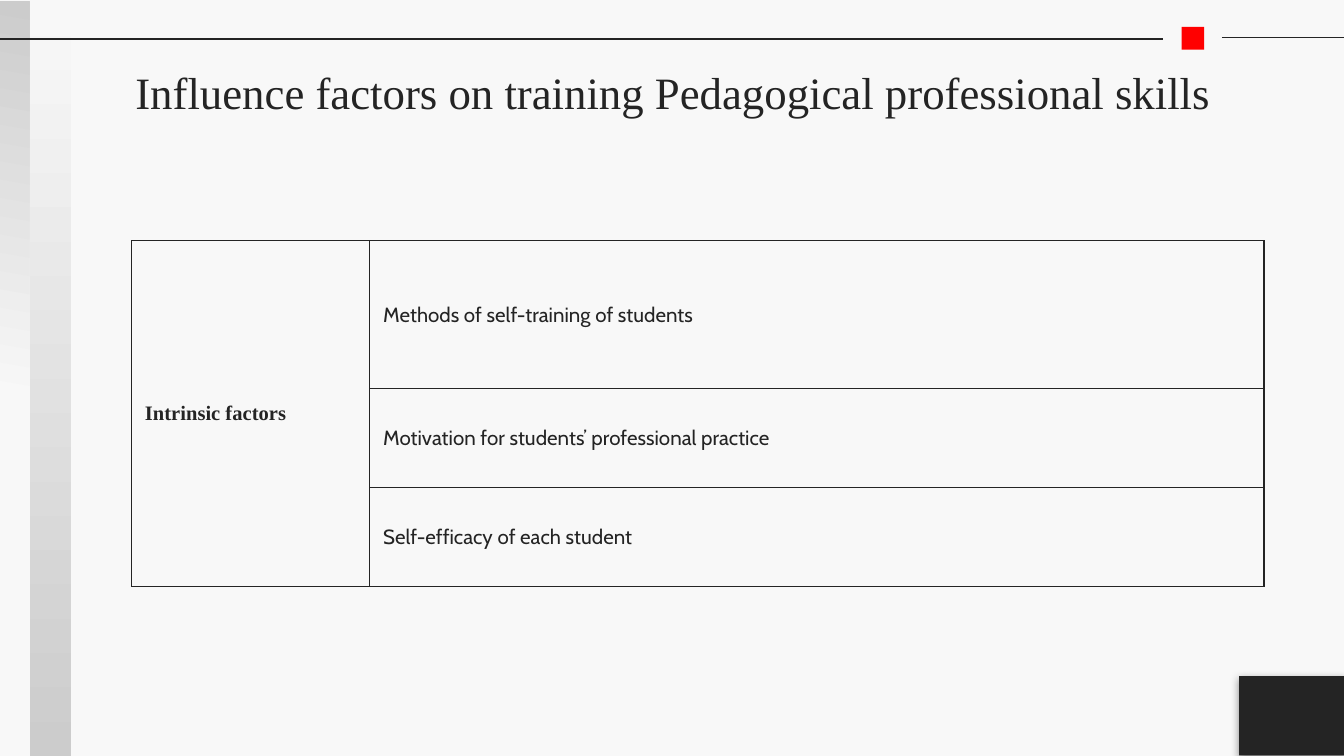
from dataclasses import dataclass

from lxml import etree
from pptx import Presentation
from pptx.dml.color import RGBColor
from pptx.enum import shapes, text
from pptx.oxml.ns import qn
from pptx.util import Cm, Pt


@dataclass(frozen=True)
class Theme:
    paper: str = "F8F8F8"
    ink: str = "242424"
    shade: str = "CCCCCC"
    accent: str = "FF0000"
    serif: str = "Times New Roman"
    sans: str = "Cabin"
    head: float = 24
    body: float = 11
    rule: float = 0.75


THEME = Theme()
FACTORS = [
    ("Methods of self-training of students", 2.8),
    ("Motivation for students’ professional practice", 1.87),
    ("Self-efficacy of each student", 1.87),
]


def rgb(code):
    return RGBColor.from_string(code)


def sub(parent, tag, **attrs):
    return etree.SubElement(parent, qn(tag), {k: str(v) for k, v in attrs.items()})


def write(frame, words, font=THEME.sans, size=THEME.body, bold=False,
          align=text.PP_ALIGN.LEFT, after=0):
    para = frame.paragraphs[0]
    para.alignment = align
    para.space_after = Pt(after)
    run = para.add_run()
    run.text = words
    run.font.name = font
    run.font.size = Pt(size)
    run.font.bold = bold
    run.font.color.rgb = rgb(THEME.ink)


def add_box(slide, left, top, width, height, color=None):
    box = slide.shapes.add_shape(shapes.MSO_SHAPE.RECTANGLE,
                                 Cm(left), Cm(top), Cm(width), Cm(height))
    box.shadow.inherit = False
    box.line.fill.background()
    if color:
        box.fill.solid()
        box.fill.fore_color.rgb = rgb(color)
    return box


def add_bar(slide, left, width, start, angle):
    """Side bar fading from paper to shade; start is where the fade begins."""
    fill = add_box(slide, left, 0.03, width, 14.26).fill
    fill.gradient()
    fill.gradient_angle = angle
    stops = zip(fill.gradient_stops, (start, 1), (THEME.paper, THEME.shade))
    for stop, place, color in stops:
        stop.position = place
        stop.color.rgb = rgb(color)


def add_rule(slide, left, right, top):
    rule = slide.shapes.add_connector(shapes.MSO_CONNECTOR.STRAIGHT,
                                      Cm(left), Cm(top), Cm(right), Cm(top))
    rule.line.color.rgb = rgb(THEME.ink)
    rule.line.width = Pt(THEME.rule)
    sub(rule.element.spPr, "a:effectLst")


def add_shadow(box):
    effects = box.element.spPr.find(qn("a:effectLst"))
    shadow = sub(effects, "a:outerShdw", blurRad=Pt(4.5), dist=Pt(1.5),
                 dir=90 * 60000, algn="bl", rotWithShape=0)
    color = sub(shadow, "a:srgbClr", val=THEME.ink)
    sub(color, "a:alpha", val=50000)


def set_title(slide, words):
    title = slide.shapes.title
    title.left, title.top, title.width, title.height = map(
        Cm, (2.01, 0.94, 21.41, 1.6))
    frame = title.text_frame
    frame.auto_size = text.MSO_AUTO_SIZE.NONE
    frame.vertical_anchor = text.MSO_ANCHOR.MIDDLE
    frame.margin_left = frame.margin_right = Cm(0.25)
    frame.margin_top = frame.margin_bottom = Cm(0.25)
    write(frame, words, font=THEME.serif, size=THEME.head,
          align=text.PP_ALIGN.CENTER)


def style_cell(cell):
    """Give a cell thin ink borders, no fill and centred height."""
    props = cell._tc.get_or_add_tcPr()
    for side in ("a:lnL", "a:lnR", "a:lnT", "a:lnB"):
        line = sub(props, side, w=Pt(THEME.rule))
        sub(sub(line, "a:solidFill"), "a:srgbClr", val=THEME.ink)
    cell.fill.background()
    cell.vertical_anchor = text.MSO_ANCHOR.MIDDLE
    cell.margin_left = cell.margin_right = Cm(0.25)
    cell.margin_top = cell.margin_bottom = 0


def add_grid(slide, label, items):
    widths = (4.5, 16.9)
    total = sum(height for _, height in items)
    grid = slide.shapes.add_table(len(items), 2, Cm(2.49), Cm(4.55),
                                  Cm(sum(widths)), Cm(total)).table
    grid.first_row = grid.horz_banding = False
    for col, width in zip(grid.columns, widths):
        col.width = Cm(width)
    for cell in grid.iter_cells():
        style_cell(cell)
    for i, (words, height) in enumerate(items):
        grid.rows[i].height = Cm(height)
        write(grid.cell(i, 1).text_frame, words, after=16)
    first = grid.cell(0, 0)
    first.merge(grid.cell(len(items) - 1, 0))
    write(first.text_frame, label, font=THEME.serif, bold=True)


def main():
    deck = Presentation()
    deck.slide_width, deck.slide_height = Cm(25.4), Cm(14.29)
    slide = deck.slides.add_slide(deck.slide_layouts[5])
    back = slide.background.fill
    back.solid()
    back.fore_color.rgb = rgb(THEME.paper)

    add_bar(slide, 0.56, 0.79, start=0, angle=270)
    add_bar(slide, 0, 0.56, start=0.47, angle=80)
    add_rule(slide, -0.3, 21.97, 0.74)
    add_box(slide, 22.33, 0.51, 0.43, 0.43, THEME.accent)
    add_rule(slide, 23.09, 25.43, 0.71)
    add_shadow(add_box(slide, 23.42, 12.78, 2.03, 1.5, THEME.ink))

    set_title(slide, "Influence factors on training Pedagogical professional skills")
    add_grid(slide, "Intrinsic factors", FACTORS)
    deck.save("out.pptx")


if __name__ == "__main__":
    main()
